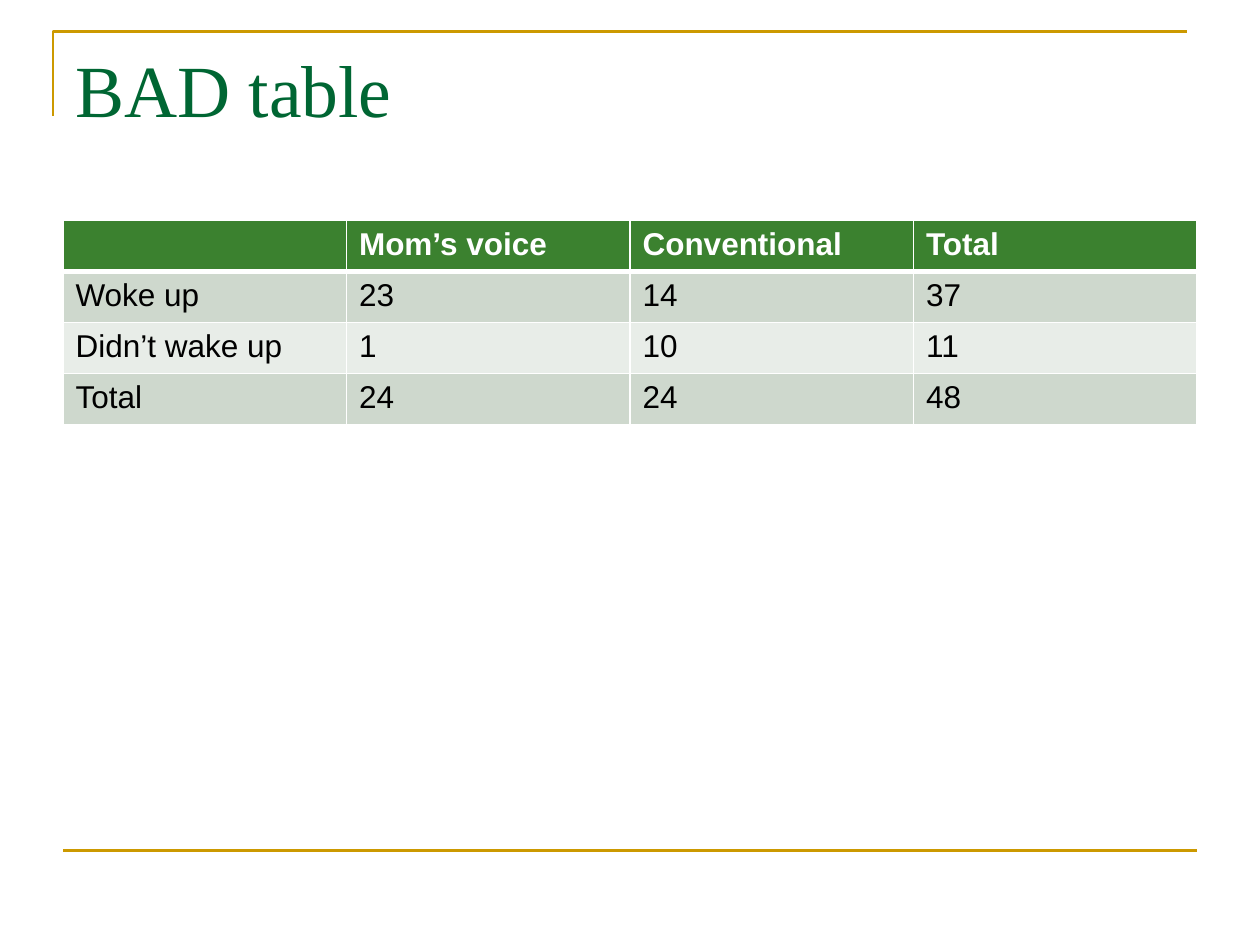
import pptx
import pptx.dml.color
import pptx.enum.shapes
import pptx.enum.text
import pptx.oxml
import pptx.oxml.ns
import pptx.util

WHITE, GOLD, TITLE_GREEN = "FFFFFF", "CC9900", "006633"
HEADER_GREEN, BANDS = "3B812F", ("CED8CD", "E8EDE8")
COLUMNS, ROWS = 20, 30  # slide grid

WAKE_COUNTS = [
    ["", "Mom’s voice", "Conventional", "Total"],
    ["Woke up", "23", "14", "37"],
    ["Didn’t wake up", "1", "10", "11"],
    ["Total", "24", "24", "48"],
]


def color(value):
    return pptx.dml.color.RGBColor.from_string(value)


class SlideBuilder:
    """Holds the style and the current slide; lengths are grid columns and rows."""

    title_font = {"name": "Times New Roman", "size": pptx.util.Pt(42), "bold": False}
    cell_font = {"name": "Arial", "size": pptx.util.Pt(18)}
    rule_width = pptx.util.Pt(1.5)

    def __init__(self, deck):
        self.slide = deck.slides.add_slide(deck.slide_layouts[6])
        self.column = deck.slide_width / COLUMNS
        self.row = deck.slide_height / ROWS

    def place(self, *lengths):
        units = (self.column, self.row)
        return [round(length * units[i % 2]) for i, length in enumerate(lengths)]

    def style_line(self, line):
        line.color.rgb = color(GOLD)
        line.width = self.rule_width

    def style_font(self, font, formats, ink):
        for attribute, value in formats.items():
            setattr(font, attribute, value)
        font.color.rgb = color(ink)

    def corner(self, *points):
        start, *rest = [self.place(*point) for point in points]
        outline = self.slide.shapes.build_freeform(*start)
        outline.add_line_segments(rest, close=False)
        bracket = outline.convert_to_shape()
        bracket.shadow.inherit = False
        bracket.fill.background()
        self.style_line(bracket.line)

    def rule(self, left, top, right, bottom):
        footer_rule = self.slide.shapes.add_connector(
            pptx.enum.shapes.MSO_CONNECTOR.STRAIGHT, *self.place(left, top, right, bottom))
        footer_rule._element.spPr.append(pptx.oxml.parse_xml(
            f"<a:effectLst {pptx.oxml.ns.nsdecls('a')}/>"))
        self.style_line(footer_rule.line)

    def title(self, wording, *box):
        frame = self.slide.shapes.add_textbox(*self.place(*box)).text_frame
        frame.word_wrap = True
        frame.vertical_anchor = pptx.enum.text.MSO_ANCHOR.TOP
        frame.text = wording
        self.style_font(frame.paragraphs[0].runs[0].font, self.title_font, TITLE_GREEN)

    def borders(self, cell, widths):
        properties = cell._tc.get_or_add_tcPr()
        for position, (side, points) in enumerate(widths.items()):
            properties.insert(position, pptx.oxml.parse_xml(
                f'<a:ln{side} {pptx.oxml.ns.nsdecls("a")} w="{pptx.util.Pt(points)}">'
                f'<a:solidFill><a:srgbClr val="{WHITE}"/></a:solidFill></a:ln{side}>'))

    def table(self, records, *box):
        left, top, width, height = self.place(*box)
        table = self.slide.shapes.add_table(
            len(records), len(records[0]), left, top, width, height).table
        for r, record in enumerate(records):
            header = r == 0
            for c, wording in enumerate(record):
                cell = table.cell(r, c)
                cell.fill.solid()
                cell.fill.fore_color.rgb = color(HEADER_GREEN if header else BANDS[(r - 1) % 2])
                self.borders(cell, {"L": 1, "R": 1, "T": 3 if r == 1 else 1,
                                    "B": 3 if header else 1})
                cell.text = wording
                for run in cell.text_frame.paragraphs[0].runs:
                    self.style_font(run.font, {**self.cell_font, "bold": header},
                                    WHITE if header else "000000")


def main():
    deck = pptx.Presentation()
    deck.slide_width = pptx.util.Inches(10)
    deck.slide_height = pptx.util.Inches(7.5)
    page = SlideBuilder(deck)

    # Gold frame lines
    page.corner((0.84, 3.68), (0.84, 1), (18.84, 1))
    page.rule(1, 27, 19, 27)

    # Title and table of counts
    page.title("BAD table", 1, 1.2, 18, 5)
    page.table(WAKE_COUNTS, 1, 7, 18, 6.48)

    deck.save("out.pptx")


if __name__ == "__main__":
    main()
